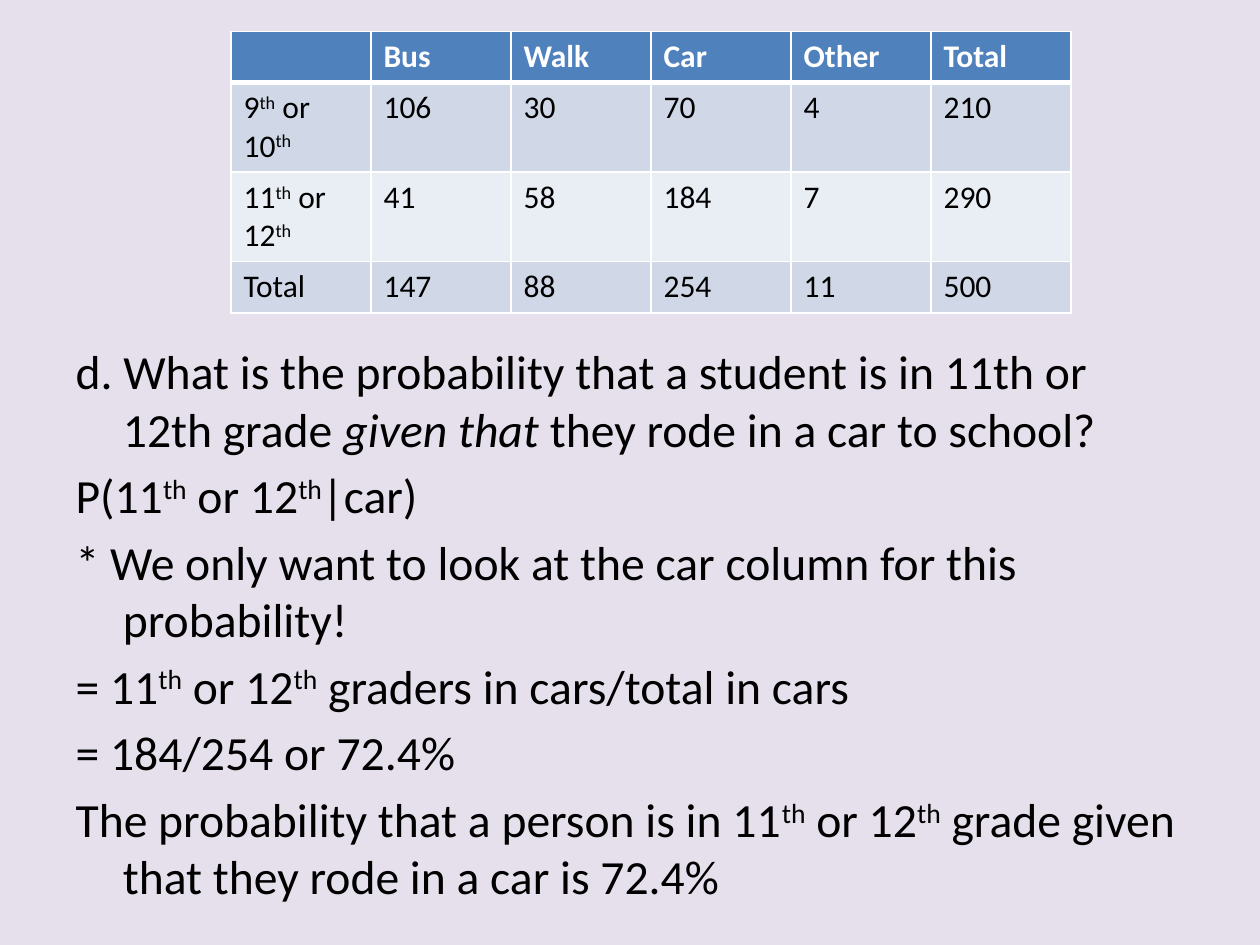
from dataclasses import dataclass

from lxml.etree import SubElement as Sub
from pptx import Presentation
from pptx.dml.color import RGBColor as RGB
from pptx.enum.text import MSO_AUTO_SIZE as Fit
from pptx.oxml.ns import qn
from pptx.util import Pt


@dataclass(frozen=True)
class Theme:
    font: str = "Calibri"
    body: float = 27.2
    cell: float = 18
    ink: str = "000000"
    white: str = "FFFFFF"
    back: str = "E6E0EC"
    head: str = "4F81BD"
    bands: tuple = ("D0D8E8", "E9EDF4")


THEME = Theme()

# In texts, ^ encloses superscript and _ encloses italic.
ROWS = [
    ["", "Bus", "Walk", "Car", "Other", "Total"],
    ["9^th^ or 10^th^", "106", "30", "70", "4", "210"],
    ["11^th^ or 12^th^", "41", "58", "184", "7", "290"],
    ["Total", "147", "88", "254", "11", "500"],
]
LINES = [
    "d. What is the probability that a student is in 11th or 12th grade "
    "_given that_ they rode in a car to school?",
    "P(11^th^ or 12^th^|car)",
    "* We only want to look at the car column for this probability!",
    "= 11^th^ or 12^th^ graders in cars/total in cars",
    "= 184/254 or 72.4%",
    "The probability that a person is in 11^th^ or 12^th^ grade given "
    "that they rode in a car is 72.4%",
]


def write(para, text, size=THEME.body, color=THEME.ink, bold=False):
    """Add runs to a paragraph, reading the ^ and _ marks."""
    for i, part in enumerate(text.split("^")):
        for j, piece in enumerate(part.split("_")):
            if not piece:
                continue
            run = para.add_run()
            run.text = piece
            font = run.font
            font.name, font.size = THEME.font, Pt(size)
            font.bold, font.italic = bold, j % 2 == 1
            font.color.rgb = RGB.from_string(color)
            if i % 2:
                font._element.set("baseline", "30000")


def paint(fill, color):
    fill.solid()
    fill.fore_color.rgb = RGB.from_string(color)


def edge(cell, **widths):
    """Draw white cell borders; keys are L, R, T and B, in that order."""
    props = cell._tc.get_or_add_tcPr()
    for n, (side, width) in enumerate(widths.items()):
        line = Sub(props, qn(f"a:ln{side}"), w=str(Pt(width)))
        Sub(Sub(line, qn("a:solidFill")), qn("a:srgbClr"), val=THEME.white)
        props.insert(n, line)


def add_grid(slide, rows, left, top, wide, high):
    shape = slide.shapes.add_table(
        len(rows), len(rows[0]), Pt(left), Pt(top), Pt(wide), Pt(high))
    table = shape.table
    for r, row in enumerate(rows):
        head = r == 0
        for c, text in enumerate(row):
            cell = table.cell(r, c)
            paint(cell.fill, THEME.head if head else THEME.bands[(r - 1) % 2])
            edge(cell, L=1, R=1, T=3 if r == 1 else 1, B=3 if head else 1)
            write(cell.text_frame.paragraphs[0], text, size=THEME.cell,
                  color=THEME.white if head else THEME.ink, bold=head)


def fill_body(shape, lines, left, top, wide, high):
    shape.left, shape.top = Pt(left), Pt(top)
    shape.width, shape.height = Pt(wide), Pt(high)
    frame = shape.text_frame
    frame.auto_size = Fit.NONE
    for n, text in enumerate(lines):
        para = frame.add_paragraph() if n else frame.paragraphs[0]
        Sub(para._p.get_or_add_pPr(), qn("a:buNone"))
        write(para, text)


def main():
    deck = Presentation()
    deck.slide_width, deck.slide_height = Pt(720), Pt(540)
    slide = deck.slides.add_slide(deck.slide_layouts[1])
    paint(slide.background.fill, THEME.back)
    title = slide.shapes.title._element
    title.getparent().remove(title)
    fill_body(slide.placeholders[1], LINES, 36, 192, 648, 324)
    add_grid(slide, ROWS, 132, 18, 480, 116.8)
    deck.save("out.pptx")


if __name__ == "__main__":
    main()
